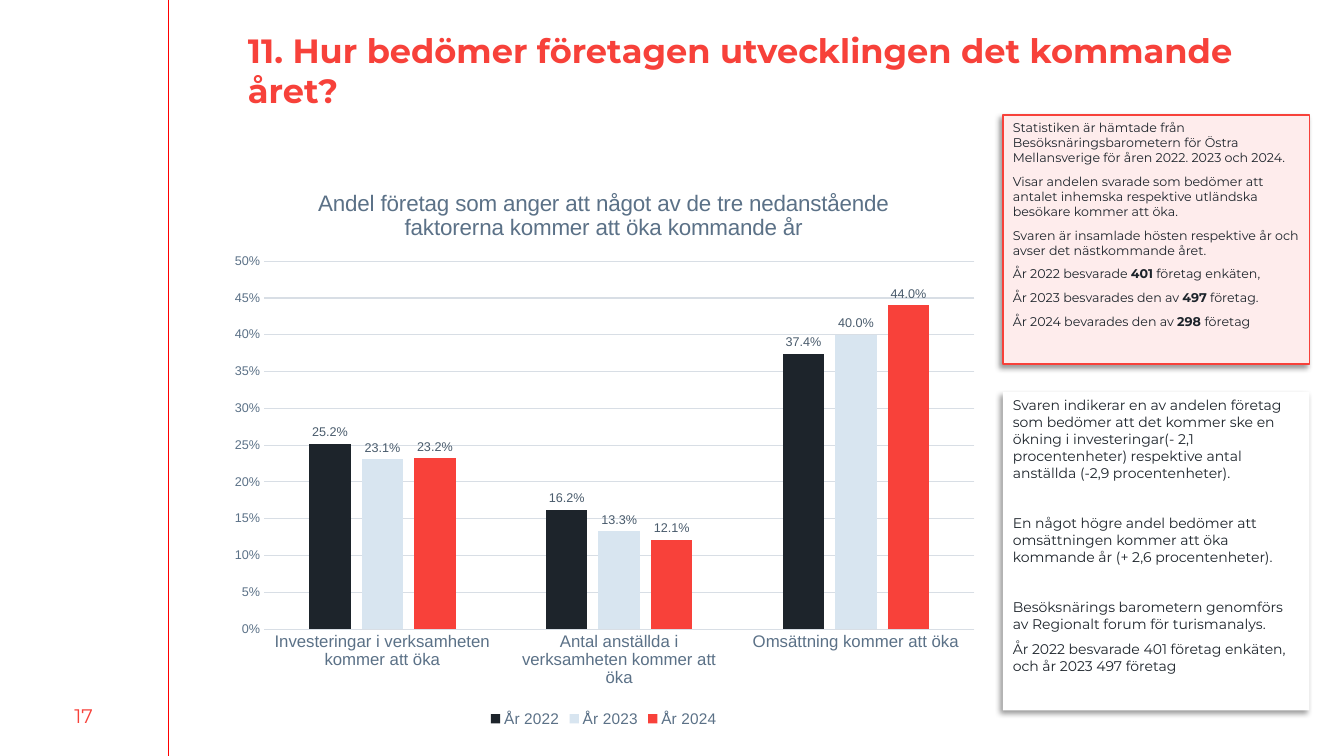
from dataclasses import dataclass
from typing import Optional

from lxml.etree import SubElement
from pptx import Presentation
from pptx.chart.data import CategoryChartData
from pptx.dml.color import RGBColor as RGB
from pptx.enum.chart import XL_CHART_TYPE as ChartType
from pptx.enum.chart import XL_LABEL_POSITION as LabelPos
from pptx.enum.chart import XL_LEGEND_POSITION as LegendPos
from pptx.enum.chart import XL_TICK_MARK as Tick
from pptx.enum.shapes import MSO_CONNECTOR as Connector
from pptx.enum.shapes import MSO_SHAPE as Shape
from pptx.enum.text import MSO_ANCHOR as Anchor
from pptx.enum.text import MSO_AUTO_SIZE as AutoSize
from pptx.enum.text import PP_ALIGN as Align
from pptx.oxml.ns import qn
from pptx.util import Pt


@dataclass(frozen=True)
class Theme:
    text_font: str = "Montserrat"
    chart_font: str = "Arial"
    red: str = "F7413A"
    rule: str = "FF0000"
    pink: str = "FEECEC"
    white: str = "FFFFFF"
    ink: str = "1D242B"
    slate: str = "5B7187"
    label: str = "495B6C"
    grid: str = "D8DEE5"
    title_size: int = 24
    number_size: int = 14
    chart_title_size: int = 16
    category_size: int = 12
    legend_size: int = 11
    chart_size: int = 10
    small_size: int = 9


THEME = Theme()


@dataclass(frozen=True)
class Run:
    text: str
    bold: bool = False


@dataclass(frozen=True)
class Para:
    runs: tuple[Run, ...]
    before: float = 3


@dataclass(frozen=True)
class Note:
    top: float
    height: float
    size: float
    fill: str
    line: Optional[str]
    paras: tuple[Para, ...]


@dataclass(frozen=True)
class Series:
    name: str
    values: tuple[float, ...]
    color: str


def para(*texts: str, before: float = 3) -> Para:
    return Para(tuple(Run(t, i % 2 == 1) for i, t in enumerate(texts)), before)


NOTE_LEFT, NOTE_WIDTH = 716.4, 219
SECTION_GAP = 21

NOTES = (
    Note(82, 178, 9, THEME.pink, THEME.red, (
        para("Statistiken är hämtade från Besöksnäringsbarometern för Östra "
             "Mellansverige för åren 2022. 2023 och 2024.", before=0),
        para("Visar andelen svarade som bedömer att antalet inhemska respektive "
             "utländska besökare kommer att öka."),
        para("Svaren är insamlade hösten respektive år och avser det nästkommande året."),
        para("År 2022 besvarade ", "401", " företag enkäten,"),
        para("År 2023 besvarades den av ", "497", " företag."),
        para("År 2024 bevarades den av ", "298 ", "företag"),
    )),
    Note(280, 227.5, 10, THEME.white, None, (
        para("Svaren indikerar en av andelen företag som bedömer att det kommer ske en "
             "ökning i investeringar(- 2,1 procentenheter) respektive antal anställda "
             "(-2,9 procentenheter).", before=0),
        para("En något högre andel bedömer att omsättningen kommer att öka kommande år "
             "(+ 2,6 procentenheter).", before=SECTION_GAP),
        para("Besöksnärings barometern genomförs av Regionalt forum för turismanalys.",
             before=SECTION_GAP),
        para("År 2022 besvarade 401 företag enkäten, och år 2023 497 företag"),
    )),
)

CATEGORIES = (
    "Investeringar i verksamheten kommer att öka",
    "Antal anställda i verksamheten kommer att öka",
    "Omsättning kommer att öka",
)
SERIES = (
    Series("År 2022", (0.252, 0.162, 0.374), THEME.ink),
    Series("År 2023", (0.231, 0.133, 0.4), "D8E5F0"),
    Series("År 2024", (0.232, 0.121, 0.44), "F8413A"),
)


def style(font, size: float, color: str, name: str, bold: bool = False) -> None:
    font.size = Pt(size)
    font.name = name
    font.bold = bold
    font.color.rgb = RGB.from_string(color)


def add_run(p, text: str, size: float, color: str, bold: bool = False,
            name: str = THEME.text_font) -> None:
    r = p.add_run()
    r.text = text
    style(r.font, size, color, name, bold)


def add_title(s, text: str) -> None:
    sp = s.shapes.title
    sp.left, sp.top, sp.width, sp.height = Pt(173.5), Pt(18), Pt(728.6), Pt(64)
    tf = sp.text_frame
    tf.auto_size = AutoSize.NONE
    tf.vertical_anchor = Anchor.MIDDLE
    tf.margin_left = tf.margin_right = tf.margin_top = tf.margin_bottom = Pt(3.6)
    p = tf.paragraphs[0]
    p.alignment = Align.LEFT
    add_run(p, text, THEME.title_size, THEME.red, True)


def add_margin(s, number: str) -> None:
    line = s.shapes.add_connector(Connector.STRAIGHT, Pt(120.2), Pt(0), Pt(120.2), Pt(540))
    line.line.color.rgb = RGB.from_string(THEME.rule)
    line.line.width = Pt(0.75)
    SubElement(line._element.spPr, qn("a:effectLst"))
    tf = s.shapes.add_textbox(Pt(0), Pt(496.8), Pt(119.5), Pt(28.8)).text_frame
    tf.word_wrap = True
    tf.vertical_anchor = Anchor.MIDDLE
    p = tf.paragraphs[0]
    p.alignment = Align.CENTER
    add_run(p, number, THEME.number_size, THEME.red)


def add_shadow(sp) -> None:
    sp.shadow.inherit = False
    effects = sp._element.spPr.find(qn("a:effectLst"))
    shadow = SubElement(effects, qn("a:outerShdw"), blurRad=str(Pt(4)), dist=str(Pt(3)),
                        dir=str(135 * 60000), algn="tr", rotWithShape="0")
    color = SubElement(shadow, qn("a:srgbClr"), val="000000")
    SubElement(color, qn("a:alpha"), val="40000")


def add_note(s, note: Note) -> None:
    sp = s.shapes.add_shape(Shape.RECTANGLE, Pt(NOTE_LEFT), Pt(note.top),
                            Pt(NOTE_WIDTH), Pt(note.height))
    sp.fill.solid()
    sp.fill.fore_color.rgb = RGB.from_string(note.fill)
    if note.line:
        sp.line.color.rgb = RGB.from_string(note.line)
        sp.line.width = Pt(1)
    else:
        sp.line.fill.background()
    add_shadow(sp)
    tf = sp.text_frame
    tf.word_wrap = True
    tf.vertical_anchor = Anchor.TOP
    for i, item in enumerate(note.paras):
        p = tf.add_paragraph() if i else tf.paragraphs[0]
        p.alignment = Align.LEFT
        p.space_before, p.space_after = Pt(item.before), Pt(3)
        for run in item.runs:
            add_run(p, run.text, note.size, THEME.ink, run.bold)


def place_plot(chart, **fractions: float) -> None:
    area = chart._chartSpace.chart.plotArea
    layout = area.find(qn("c:layout"))
    if layout is None:
        layout = SubElement(area, qn("c:layout"))
        area.insert(0, layout)
    manual = SubElement(layout, qn("c:manualLayout"))
    settings = {"layoutTarget": "inner", "xMode": "edge", "yMode": "edge", **fractions}
    for tag, value in settings.items():
        SubElement(manual, qn(f"c:{tag}"), val=str(value))


def add_outlook_chart(s, title: str) -> None:
    data = CategoryChartData(number_format="0.0%")
    data.categories = CATEGORIES
    for item in SERIES:
        data.add_series(item.name, item.values)
    chart = s.shapes.add_chart(ChartType.COLUMN_CLUSTERED, Pt(155.5), Pt(120.2),
                               Pt(551.5), Pt(402.5), data).chart
    font = THEME.chart_font
    style(chart.font, THEME.chart_size, THEME.ink, font)
    chart.has_title = True
    add_run(chart.chart_title.text_frame.paragraphs[0], title,
            THEME.chart_title_size, THEME.slate, name=font)
    chart.chart_title.include_in_layout = False
    chart.has_legend = True
    chart.legend.position = LegendPos.BOTTOM
    chart.legend.include_in_layout = False
    style(chart.legend.font, THEME.legend_size, THEME.slate, font)

    cat, val = chart.category_axis, chart.value_axis
    for axis, size in ((cat, THEME.category_size), (val, THEME.small_size)):
        axis.major_tick_mark = axis.minor_tick_mark = Tick.NONE
        style(axis.tick_labels.font, size, THEME.slate, font)
    val.minimum_scale, val.maximum_scale, val.major_unit = 0, 0.5, 0.05
    val.tick_labels.number_format = "0%"
    val.tick_labels.number_format_is_linked = False
    val.format.line.fill.background()
    for line in (cat.format.line, val.major_gridlines.format.line):
        line.color.rgb = RGB.from_string(THEME.grid)
        line.width = Pt(0.75)

    plot = chart.plots[0]
    plot.gap_width, plot.overlap, plot.vary_by_categories = 219, -27, False
    for series, item in zip(plot.series, SERIES):
        series.format.fill.solid()
        series.format.fill.fore_color.rgb = RGB.from_string(item.color)
        labels = series.data_labels
        labels.show_value = True
        labels.number_format = "0.0%"
        labels.number_format_is_linked = False
        labels.position = LabelPos.OUTSIDE_END
        style(labels.font, THEME.small_size, THEME.label, font)
    place_plot(chart, x=0.06, y=0.165, w=0.92, h=0.653)


def main() -> None:
    prs = Presentation()
    prs.slide_width, prs.slide_height = Pt(960), Pt(540)
    s = prs.slides.add_slide(prs.slide_layouts[5])
    add_margin(s, "17")
    add_title(s, "11. Hur bedömer företagen utvecklingen det kommande året?")
    for note in NOTES:
        add_note(s, note)
    add_outlook_chart(s, "Andel företag som anger att något av de tre nedanstående "
                         "faktorerna kommer att öka kommande år")
    prs.save("out.pptx")


if __name__ == "__main__":
    main()
